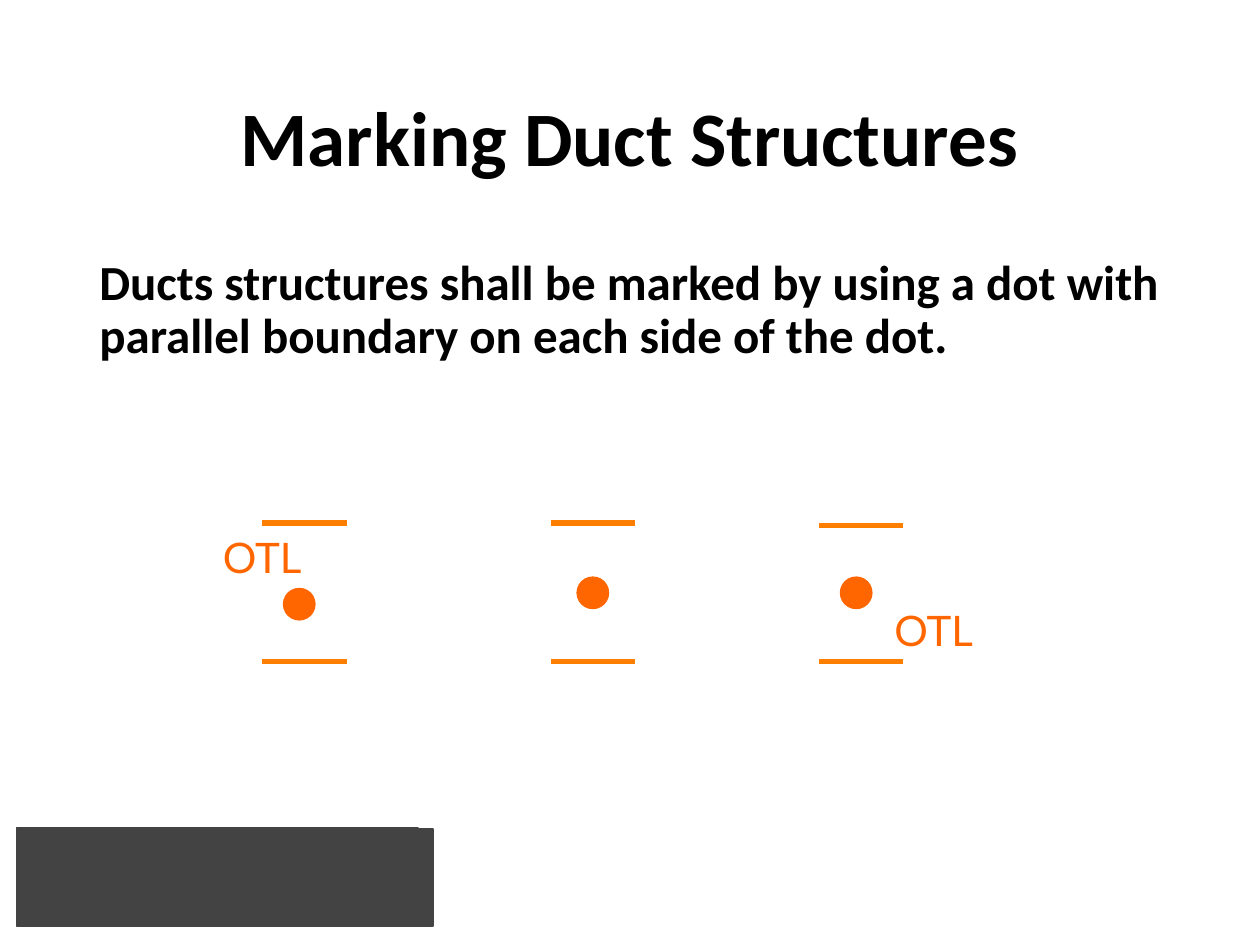
from lxml import etree
from pptx import Presentation
from pptx.dml.color import RGBColor
from pptx.enum.shapes import MSO_CONNECTOR as CONNECTOR, MSO_SHAPE as SHAPE
from pptx.enum.text import MSO_ANCHOR as ANCHOR, PP_ALIGN as ALIGN
from pptx.oxml.ns import qn
from pptx.util import Inches, Pt

COLORS = {"text": "000000", "mark": "FF6600", "boundary": "FE7F00", "footer": "434343"}
DOT_SIZE = 0.25
BOUNDARY_LENGTH = 0.67
BOTTOM_BOUNDARY = 5.25
DUCTS = [
    {"left": 2.08, "top": 4.15, "dot": (2.25, 4.67)},
    {"left": 4.37, "top": 4.15, "dot": (4.58, 4.58)},
    {"left": 6.5, "top": 4.17, "dot": (6.67, 4.58)},
]
OWNER_LABELS = [(1.67, 4.17), (7, 4.75)]


def color(name):
    return RGBColor.from_string(COLORS[name])


def add_text(slide, text, left, top, width, height, size, font="Calibri", fill="text",
             bold=False, align=ALIGN.LEFT, anchor=ANCHOR.TOP, line_spacing=1.0):
    frame = slide.shapes.add_textbox(
        Inches(left), Inches(top), Inches(width), Inches(height)).text_frame
    frame.word_wrap = True
    frame.vertical_anchor = anchor
    paragraph = frame.paragraphs[0]
    paragraph.text = text
    paragraph.alignment = align
    paragraph.line_spacing = line_spacing
    paragraph.font.name = font
    paragraph.font.size = Pt(size)
    paragraph.font.bold = bold
    paragraph.font.color.rgb = color(fill)


def add_solid(slide, kind, left, top, width, height, fill, line_width):
    shape = slide.shapes.add_shape(
        kind, Inches(left), Inches(top), Inches(width), Inches(height))
    shape.shadow.inherit = False
    shape.fill.solid()
    shape.fill.fore_color.rgb = color(fill)
    shape.line.color.rgb = color(fill)
    shape.line.width = Pt(line_width)


def add_boundary(slide, left, top):
    connector = slide.shapes.add_connector(
        CONNECTOR.STRAIGHT, Inches(left), Inches(top),
        Inches(left + BOUNDARY_LENGTH), Inches(top))
    connector.line.color.rgb = color("boundary")
    connector.line.width = Pt(3)
    etree.SubElement(connector._element.spPr, qn("a:effectLst"))


def add_duct(slide, left, top, dot):
    add_solid(slide, SHAPE.OVAL, *dot, DOT_SIZE, DOT_SIZE, "mark", 0.75)
    for height in (top, BOTTOM_BOUNDARY):
        add_boundary(slide, left, height)


def main():
    presentation = Presentation()
    presentation.slide_width = Inches(10)
    presentation.slide_height = Inches(7.5)
    slide = presentation.slides.add_slide(presentation.slide_layouts[6])

    add_solid(slide, SHAPE.RECTANGLE, 0.13, 6.57, 3.19, 0.78, "footer", 1)
    add_solid(slide, SHAPE.RECTANGLE, 0.21, 6.58, 3.23, 0.77, "footer", 1)
    add_text(slide, "Marking Duct Structures", 0.69, 0.4, 8.62, 1.45, size=44,
             bold=True, align=ALIGN.CENTER, anchor=ANCHOR.MIDDLE, line_spacing=0.9)
    add_text(slide, "Ducts structures shall be marked by using a dot with "
             "parallel boundary on each side of the dot.",
             0.69, 2, 8.62, 4.76, size=28, bold=True, line_spacing=0.9)
    for left, top in OWNER_LABELS:
        add_text(slide, "OTL", left, top, 1.75, 0.5, size=24, font="Lato", fill="mark")
    for duct in DUCTS:
        add_duct(slide, **duct)

    presentation.save("out.pptx")


if __name__ == "__main__":
    main()
